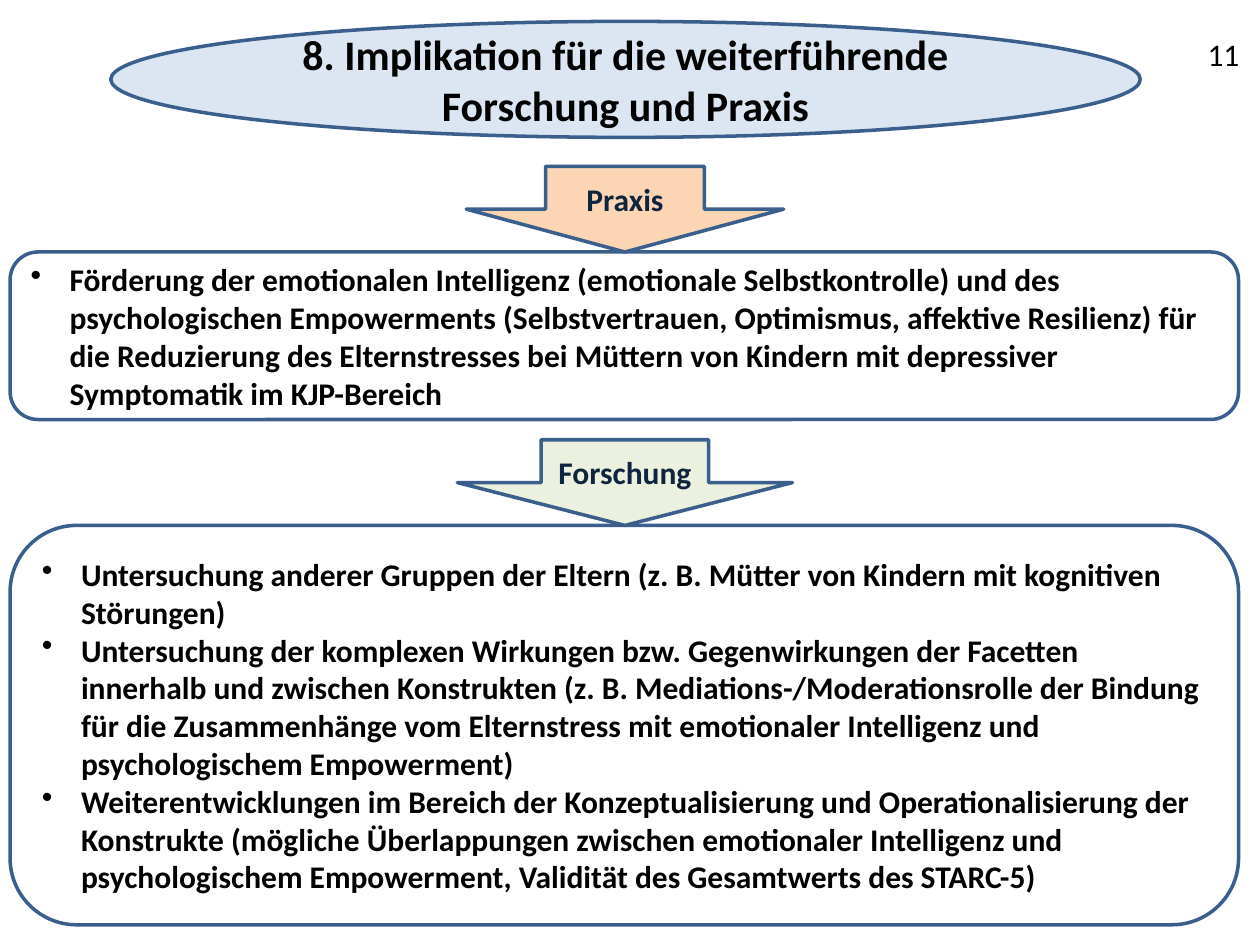
from lxml import etree
from pptx import Presentation
from pptx.dml.color import RGBColor
from pptx.enum.shapes import MSO_SHAPE as Shape
from pptx.enum.text import MSO_ANCHOR as Anchor, PP_ALIGN as Align
from pptx.oxml.ns import qn
from pptx.util import Inches, Pt

BLACK = RGBColor(0x00, 0x00, 0x00)
WHITE = RGBColor(0xFF, 0xFF, 0xFF)
NAVY = RGBColor(0x0F, 0x24, 0x3E)
OUTLINE = RGBColor(0x3A, 0x5F, 0x8C)
PALE_BLUE = RGBColor(0xDC, 0xE6, 0xF2)
PEACH = RGBColor(0xFC, 0xD5, 0xB5)
PALE_GREEN = RGBColor(0xEB, 0xF1, 0xDE)

PRACTICE = [
    "Förderung der emotionalen Intelligenz (emotionale Selbstkontrolle) und des "
    "psychologischen Empowerments (Selbstvertrauen, Optimismus, affektive Resilienz) "
    "für die Reduzierung des Elternstresses bei Müttern von Kindern mit depressiver "
    "Symptomatik im KJP-Bereich",
]
RESEARCH = [
    "Untersuchung anderer Gruppen der Eltern (z. B. Mütter von Kindern mit kognitiven "
    "Störungen)",
    "Untersuchung der komplexen Wirkungen bzw. Gegenwirkungen der Facetten innerhalb "
    "und zwischen Konstrukten (z. B. Mediations-/Moderationsrolle der Bindung für die "
    "Zusammenhänge vom Elternstress mit emotionaler Intelligenz und psychologischem "
    "Empowerment)",
    "Weiterentwicklungen im Bereich der Konzeptualisierung und Operationalisierung der "
    "Konstrukte (mögliche Überlappungen zwischen emotionaler Intelligenz und "
    "psychologischem Empowerment, Validität des Gesamtwerts des STARC-5)",
]


def write(shape, texts, size=18, color=BLACK, bold=True, bullets=False):
    frame = shape.text_frame
    frame.word_wrap = True
    frame.vertical_anchor = Anchor.MIDDLE
    frame.text = "\n".join(texts)
    for paragraph in frame.paragraphs:
        paragraph.alignment = Align.LEFT if bullets else Align.CENTER
        font = paragraph.font
        font.name, font.size, font.bold = "Calibri", Pt(size), bold
        font.color.rgb = color
        if bullets:
            properties = paragraph._p.get_or_add_pPr()
            properties.set("marL", str(Inches(0.31)))
            properties.set("indent", str(Inches(-0.31)))
            bullet = etree.Element(qn("a:buChar"), char="•")
            properties.find(qn("a:defRPr")).addprevious(bullet)


def add_panel(kind, left, top, width, height, fill):
    shape = slide.shapes.add_shape(
        kind, Inches(left), Inches(top), Inches(width), Inches(height))
    shape.shadow.inherit = False
    shape.fill.solid()
    shape.fill.fore_color.rgb = fill
    shape.line.color.rgb = OUTLINE
    shape.line.width = Pt(2)
    return shape


presentation = Presentation()
presentation.slide_width = Inches(10)
presentation.slide_height = Inches(7.5)
slide = presentation.slides.add_slide(presentation.slide_layouts[6])

title = add_panel(Shape.OVAL, 0.88, 0.17, 8.17, 0.92, PALE_BLUE)
write(title, ["8. Implikation für die weiterführende Forschung und Praxis"], size=24)

sections = [
    ("Praxis", PEACH, 2.52, 2, 1.33, PRACTICE),
    ("Forschung", PALE_GREEN, 2.66, 4.17, 3.17, RESEARCH),
]
for label, fill, arrow_width, top, height, points in sections:
    box = add_panel(Shape.ROUNDED_RECTANGLE, 0.08, top, 9.75, height, WHITE)
    write(box, points, bullets=True)
    arrow = add_panel(
        Shape.DOWN_ARROW, 4.96 - arrow_width / 2, top - 0.68, arrow_width, 0.68, fill)
    write(arrow, [label], color=NAVY)

page_number = slide.shapes.add_textbox(
    Inches(9.42), Inches(0.18), Inches(0.58), Inches(0.5))
write(page_number, ["11"], bold=False)

presentation.save("out.pptx")
